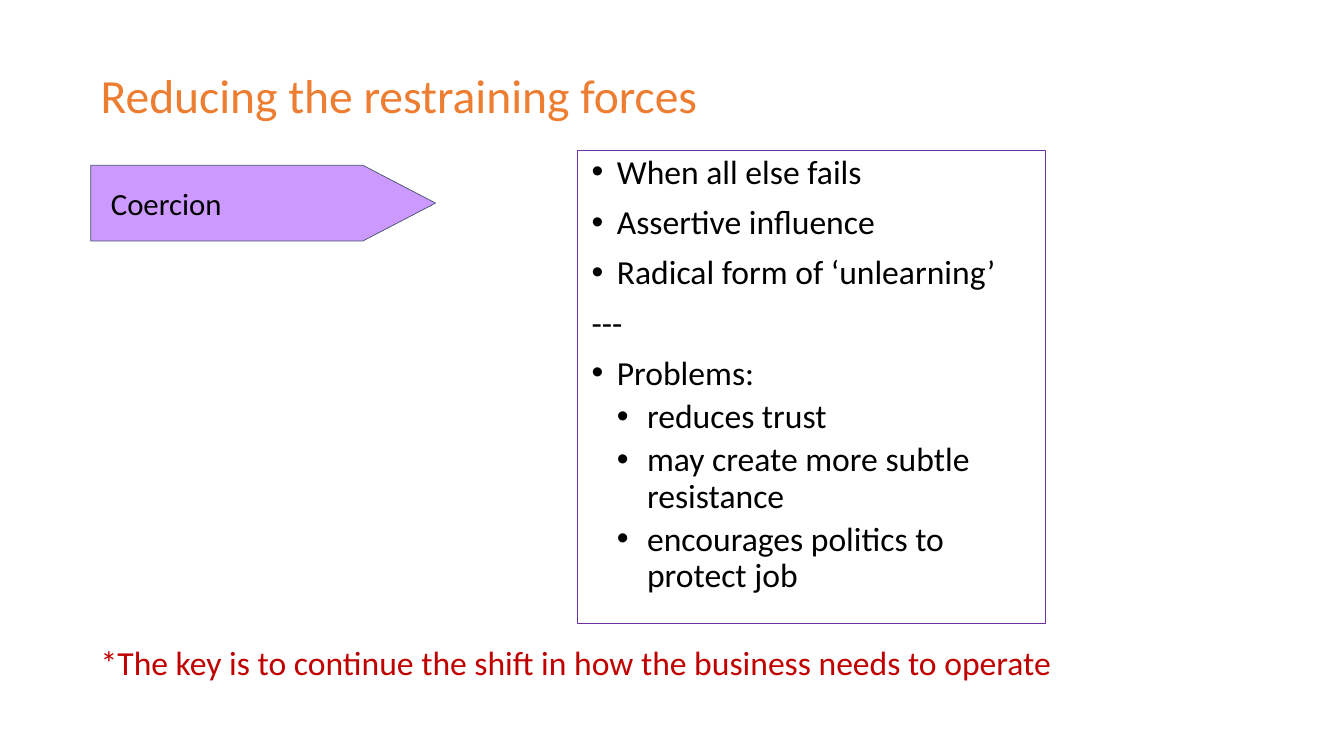
from dataclasses import dataclass

import pptx
import pptx.dml.color
import pptx.enum.shapes
import pptx.enum.text
import pptx.oxml.ns
import pptx.util
from lxml import etree

Inches = pptx.util.Inches
Pt = pptx.util.Pt
Color = pptx.dml.color.RGBColor.from_string
Shape = pptx.enum.shapes.MSO_SHAPE
Anchor = pptx.enum.text.MSO_ANCHOR


@dataclass(frozen=True)
class Theme:
    font: str = "Calibri"
    bullet_font: str = "Arial"
    title_size: int = 34
    body_size: int = 24
    label_size: int = 22
    title: str = "ED7D31"
    text: str = "000000"
    accent: str = "C00000"
    label_fill: str = "CC99FF"
    label_line: str = "44546A"
    panel_line: str = "7030A0"
    line_spacing: float = 0.9


THEME = Theme()
SLIDE_SIZE = (13.33, 7.5)
LEFT = 0.9

# Level: (left margin, first-line indent, space before, bullet)
LEVELS = {
    "point": (0.29, -0.25, 10, "•"),
    "divider": (0.04, 0, 10, None),
    "detail": (0.59, -0.3, 5, "•"),
}
POINTS = [
    ("point", "When all else fails"),
    ("point", "Assertive influence"),
    ("point", "Radical form of ‘unlearning’"),
    ("divider", "---"),
    ("point", "Problems:"),
    ("detail", "reduces trust"),
    ("detail", "may create more subtle resistance"),
    ("detail", "encourages politics to protect job"),
]


def add_run(paragraph, text, size, color):
    run = paragraph.add_run()
    run.text = text
    run.font.name = THEME.font
    run.font.size = Pt(size)
    run.font.color.rgb = Color(color)


def set_level(paragraph, level):
    margin, indent, _, bullet = LEVELS[level]
    properties = paragraph._p.get_or_add_pPr()
    properties.set("marL", str(Inches(margin)))
    properties.set("indent", str(Inches(indent)))
    if level == "detail":
        paragraph.level = 1
    qn = pptx.oxml.ns.qn
    if bullet:
        etree.SubElement(properties, qn("a:buFont"), typeface=THEME.bullet_font)
        etree.SubElement(properties, qn("a:buChar"), char=bullet)
    else:
        etree.SubElement(properties, qn("a:buNone"))


def add_text_line(slide, box, text, size, color, anchor=Anchor.TOP, spacing=1.0):
    frame = slide.shapes.add_textbox(*map(Inches, box)).text_frame
    frame.word_wrap = True
    frame.vertical_anchor = anchor
    frame.paragraphs[0].line_spacing = spacing
    add_run(frame.paragraphs[0], text, size, color)


def add_outlined(slide, preset, box, line_color, line_width):
    shape = slide.shapes.add_shape(preset, *map(Inches, box))
    shape.shadow.inherit = False
    shape.fill.background()
    shape.line.color.rgb = Color(line_color)
    shape.line.width = Pt(line_width)
    shape.text_frame.word_wrap = True
    return shape


def add_points_panel(slide, box):
    panel = add_outlined(slide, Shape.RECTANGLE, box, THEME.panel_line, 0.75)
    frame = panel.text_frame
    frame.vertical_anchor = Anchor.TOP
    for index, (level, text) in enumerate(POINTS):
        paragraph = frame.add_paragraph() if index else frame.paragraphs[0]
        set_level(paragraph, level)
        paragraph.alignment = pptx.enum.text.PP_ALIGN.LEFT
        paragraph.line_spacing = THEME.line_spacing
        paragraph.space_before = Pt(LEVELS[level][2] if index else 0)
        add_run(paragraph, text, THEME.body_size, THEME.text)


def add_strategy_label(slide, box, text):
    label = add_outlined(slide, Shape.PENTAGON, box, THEME.label_line, 0.5)
    label.adjustments[0] = 0.96
    label.fill.solid()
    label.fill.fore_color.rgb = Color(THEME.label_fill)
    frame = label.text_frame
    frame.margin_left = Inches(0.2)
    frame.vertical_anchor = Anchor.MIDDLE
    frame.paragraphs[0].alignment = pptx.enum.text.PP_ALIGN.LEFT
    add_run(frame.paragraphs[0], text, THEME.label_size, THEME.text)


def main():
    deck = pptx.Presentation()
    deck.slide_width, deck.slide_height = map(Inches, SLIDE_SIZE)
    slide = deck.slides.add_slide(deck.slide_layouts[6])
    add_text_line(slide, (LEFT, 0.46, 8.45, 1.02), "Reducing the restraining forces",
                  THEME.title_size, THEME.title, Anchor.MIDDLE, THEME.line_spacing)
    add_points_panel(slide, (5.73, 1.49, 4.64, 4.7))
    add_strategy_label(slide, (LEFT, 1.64, 3.42, 0.75), "Coercion")
    add_text_line(slide, (LEFT, 6.32, 11.88, 0.5),
                  "*The key is to continue the shift in how the business needs to operate",
                  THEME.body_size, THEME.accent)
    deck.save("out.pptx")


if __name__ == "__main__":
    main()
